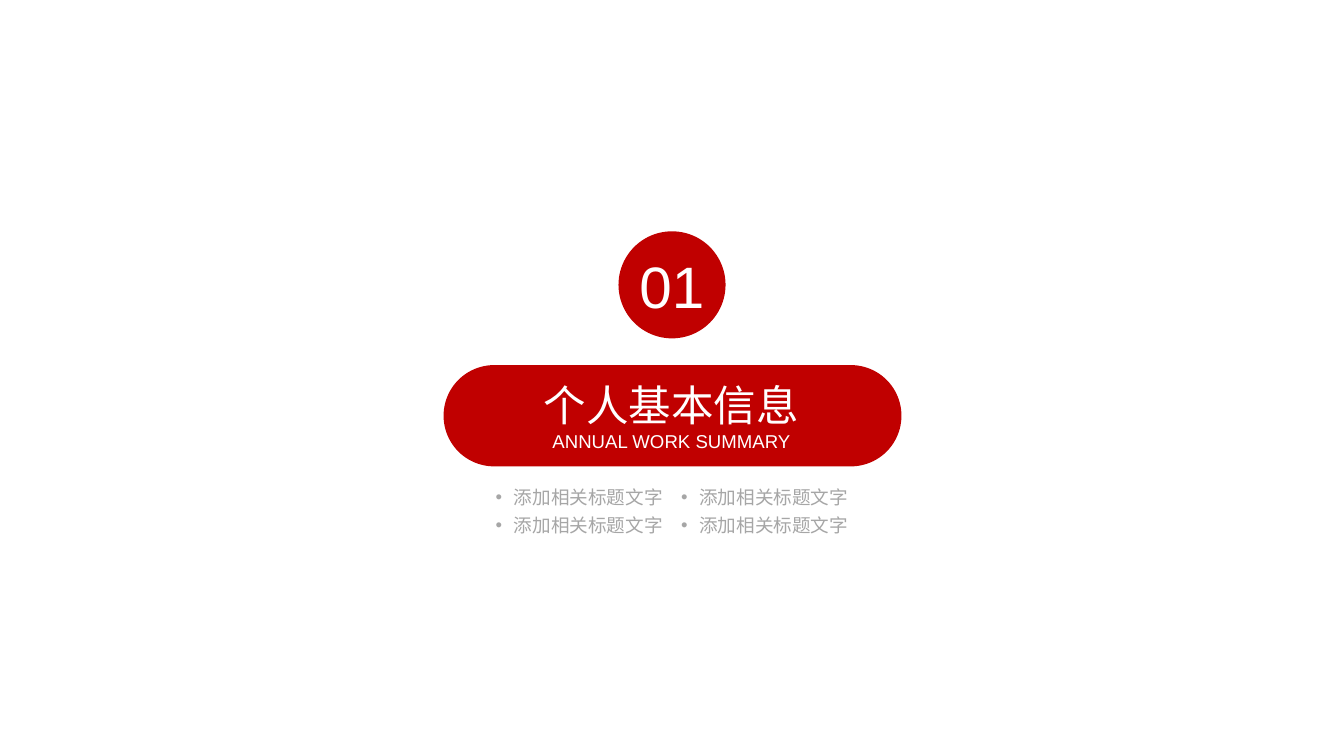
from lxml import etree
from pptx import Presentation
from pptx.dml.color import RGBColor
from pptx.enum import shapes, text
from pptx.oxml.ns import qn
from pptx.util import Inches, Pt

RED = RGBColor(0xC0, 0x00, 0x00)
WHITE = RGBColor(0xFF, 0xFF, 0xFF)
GREY = RGBColor(0xA6, 0xA6, 0xA6)

prs = Presentation()
prs.slide_width, prs.slide_height = Inches(14.06), Inches(7.91)
s = prs.slides.add_slide(prs.slide_layouts[5])


def add_red_shape(kind, x, y, w, h):
    sp = s.shapes.add_shape(kind, Inches(x), Inches(y), Inches(w), Inches(h))
    sp.shadow.inherit = False
    sp.fill.solid()
    sp.fill.fore_color.rgb = RED
    sp.line.fill.background()
    return sp


def set_text(sp, lines, color, anchor, wrap=True):
    tf = sp.text_frame
    tf.margin_left = tf.margin_top = tf.margin_right = tf.margin_bottom = 0
    tf.vertical_anchor = anchor
    tf.word_wrap = wrap
    tf.auto_size = text.MSO_AUTO_SIZE.NONE
    tf.text = "\n".join(line for line, size in lines)
    for p, (line, size) in zip(tf.paragraphs, lines):
        p.alignment = text.PP_ALIGN.CENTER
        p.font.name = "Arial"
        p.font.size = Pt(size)
        p.font.color.rgb = color
    return tf


# Title pill and section number
pill = add_red_shape(shapes.MSO_SHAPE.ROUNDED_RECTANGLE, 4.64, 3.82, 4.79, 1.06)
pill.adjustments[0] = 0.5
number = add_red_shape(shapes.MSO_SHAPE.OVAL, 6.47, 2.42, 1.12, 1.12)
set_text(number, [("01", 44)], WHITE, text.MSO_ANCHOR.MIDDLE)

# Section title, brought in front of the pill
title = s.shapes.title
title.left, title.top = Inches(5.64), Inches(3.96)
title.width, title.height = Inches(2.77), Inches(0.77)
set_text(title, [("个人基本信息", 32), ("ANNUAL WORK SUMMARY", 14)],
         WHITE, text.MSO_ANCHOR.MIDDLE)
s.shapes._spTree.append(title._element)

# Two by two grid of bullet points
for row in range(2):
    for col in range(2):
        box = s.shapes.add_textbox(Inches(5.18 + 1.94 * col), Inches(5.08 + 0.3 * row),
                                   Inches(1.76), Inches(0.24))
        tf = set_text(box, [("添加相关标题文字", 14)], GREY, text.MSO_ANCHOR.TOP, wrap=False)
        pPr = tf.paragraphs[0]._p.get_or_add_pPr()
        pPr.set("marL", str(Inches(0.19)))
        pPr.set("indent", str(-Inches(0.19)))
        bullet_font = etree.Element(qn("a:buFont"), typeface="Arial")
        bullet = etree.Element(qn("a:buChar"), char="•")
        pPr.find(qn("a:defRPr")).addprevious(bullet_font)
        bullet_font.addnext(bullet)

prs.save("out.pptx")
